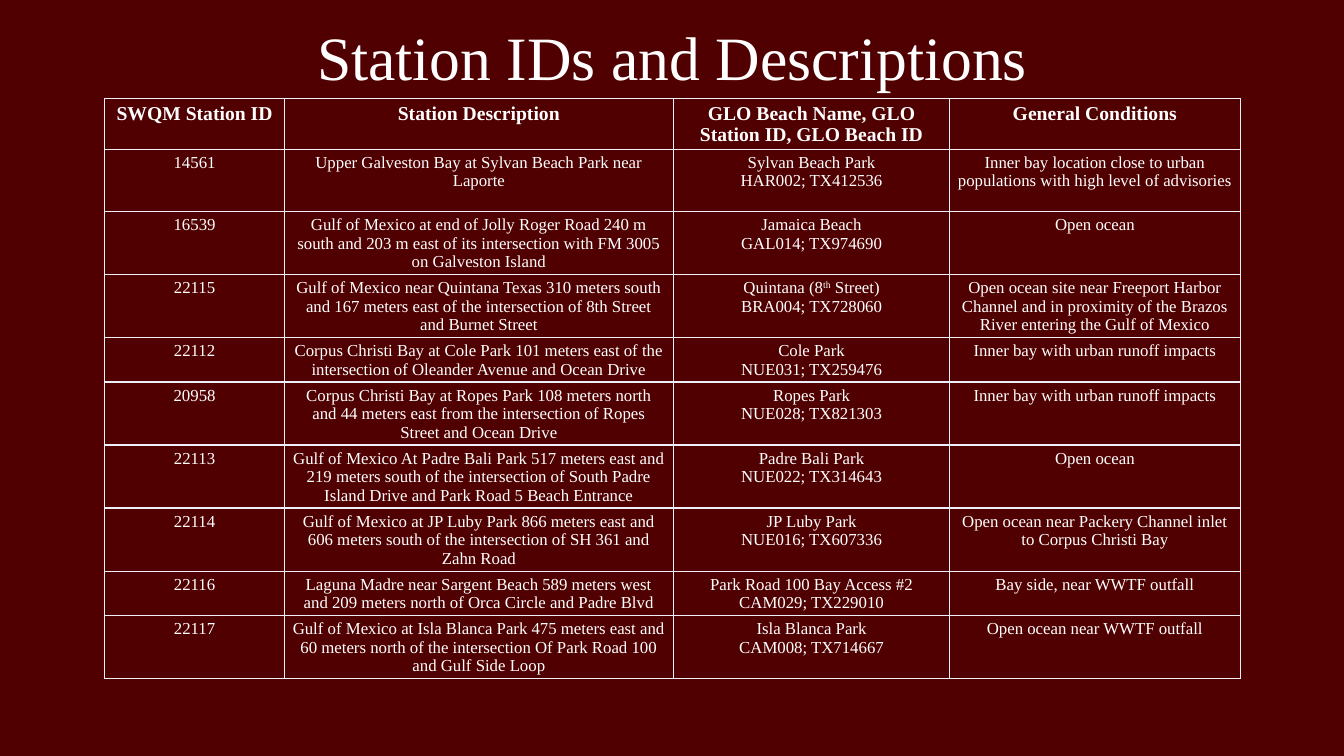
from lxml.etree import SubElement
from pptx import Presentation
from pptx.dml.color import RGBColor
from pptx.enum.text import MSO_ANCHOR, PP_ALIGN
from pptx.oxml.ns import qn
from pptx.util import Inches, Pt

COLORS = {"background": "500000", "text": "FFFFFF", "border": "EEEEF9"}
FONT = "Times New Roman"
TITLE = {"size": Pt(44), "bold": False}
HEADER = {"size": Pt(14), "bold": True}
BODY = {"size": Pt(12), "bold": False}
CELL = {
    "margin_left": Inches(0.08),
    "margin_top": Inches(0.04),
    "margin_right": Inches(0.08),
    "margin_bottom": Inches(0.03),
    "vertical_anchor": MSO_ANCHOR.TOP,
}
TITLE_FRAME = {
    "margin_top": Inches(0.12),
    "vertical_anchor": MSO_ANCHOR.TOP,
    "word_wrap": True,
}

COLUMN_WIDTHS = [1.78, 3.86, 2.74, 2.88]
HEADER_HEIGHT = 0.5
ROW_HEIGHTS = {2: 0.44, 3: 0.62}  # by number of text lines
ROW_LINES = [3, 3, 3, 2, 3, 3, 3, 2, 3]
STATIONS = [
    ["SWQM Station ID", "Station Description",
     "GLO Beach Name, GLO Station ID, GLO Beach ID", "General Conditions"],
    ["14561", "Upper Galveston Bay at Sylvan Beach Park near Laporte",
     "Sylvan Beach Park\nHAR002; TX412536",
     "Inner bay location close to urban populations with high level of advisories"],
    ["16539",
     "Gulf of Mexico at end of Jolly Roger Road 240 m south and 203 m east "
     "of its intersection with FM 3005 on Galveston Island",
     "Jamaica Beach\nGAL014; TX974690", "Open ocean"],
    ["22115",
     "Gulf of Mexico near Quintana Texas 310 meters south and 167 meters east "
     "of the intersection of 8th Street and Burnet Street",
     "Quintana (8^th^ Street)\nBRA004; TX728060",
     "Open ocean site near Freeport Harbor Channel and in proximity "
     "of the Brazos River entering the Gulf of Mexico"],
    ["22112",
     "Corpus Christi Bay at Cole Park 101 meters east "
     "of the intersection of Oleander Avenue and Ocean Drive",
     "Cole Park\nNUE031; TX259476", "Inner bay with urban runoff impacts"],
    ["20958",
     "Corpus Christi Bay at Ropes Park 108 meters north and 44 meters east "
     "from the intersection of Ropes Street and Ocean Drive",
     "Ropes Park\nNUE028; TX821303", "Inner bay with urban runoff impacts"],
    ["22113",
     "Gulf of Mexico At Padre Bali Park 517 meters east and 219 meters south "
     "of the intersection of South Padre Island Drive and Park Road 5 Beach Entrance",
     "Padre Bali Park\nNUE022; TX314643", "Open ocean"],
    ["22114",
     "Gulf of Mexico at JP Luby Park 866 meters east and 606 meters south "
     "of the intersection of SH 361 and Zahn Road",
     "JP Luby Park\nNUE016; TX607336",
     "Open ocean near Packery Channel inlet to Corpus Christi Bay"],
    ["22116",
     "Laguna Madre near Sargent Beach 589 meters west and 209 meters north "
     "of Orca Circle and Padre Blvd",
     "Park Road 100 Bay Access #2\nCAM029; TX229010", "Bay side, near WWTF outfall"],
    ["22117",
     "Gulf of Mexico at Isla Blanca Park 475 meters east and 60 meters north "
     "of the intersection Of Park Road 100 and Gulf Side Loop",
     "Isla Blanca Park\nCAM008; TX714667", "Open ocean near WWTF outfall"],
]


def apply(target, values):
    for name, value in values.items():
        setattr(target, name, value)


class SlideBuilder:
    def __init__(self, prs):
        self.s = prs.slides.add_slide(prs.slide_layouts[5])
        fill = self.s.background.fill
        fill.solid()
        fill.fore_color.rgb = RGBColor.from_string(COLORS["background"])

    def add_text(self, tf, text, font):
        """Fill tf with one paragraph a line; ^marks^ enclose superscript."""
        for i, line in enumerate(text.split("\n")):
            p = tf.paragraphs[0] if i == 0 else tf.add_paragraph()
            p.alignment = PP_ALIGN.CENTER
            for j, part in enumerate(line.split("^")):
                r = p.add_run()
                r.text = part
                apply(r.font, {"name": FONT, **font})
                r.font.color.rgb = RGBColor.from_string(COLORS["text"])
                if j % 2:
                    r._r.get_or_add_rPr().set("baseline", "30000")

    def title(self, text, left, top, width, height):
        sp = self.s.shapes.title
        apply(sp, {"left": Inches(left), "top": Inches(top),
                   "width": Inches(width), "height": Inches(height)})
        apply(sp.text_frame, TITLE_FRAME)
        self.add_text(sp.text_frame, text, TITLE)

    def border(self, cell):
        tc_pr = cell._tc.get_or_add_tcPr()
        for side in ("a:lnL", "a:lnR", "a:lnT", "a:lnB"):
            ln = SubElement(tc_pr, qn(side), w=str(int(Pt(1))))
            fill = SubElement(ln, qn("a:solidFill"))
            SubElement(fill, qn("a:srgbClr"), val=COLORS["border"])

    def table(self, rows, left, top, widths, heights):
        table = self.s.shapes.add_table(
            len(rows), len(widths), Inches(left), Inches(top),
            Inches(sum(widths)), Inches(sum(heights))).table
        apply(table, {"first_row": False, "horz_banding": False})
        for column, width in zip(table.columns, widths):
            column.width = Inches(width)
        for i, (row, height) in enumerate(zip(table.rows, heights)):
            row.height = Inches(height)
            for cell, text in zip(row.cells, rows[i]):
                apply(cell, CELL)
                self.border(cell)
                cell.fill.background()
                self.add_text(cell.text_frame, text, BODY if i else HEADER)


def main():
    prs = Presentation()
    prs.slide_width, prs.slide_height = Inches(13.33), Inches(7.5)
    slide = SlideBuilder(prs)
    slide.title("Station IDs and Descriptions", 0.64, 0.07, 12.06, 1.3)
    heights = [HEADER_HEIGHT] + [ROW_HEIGHTS[n] for n in ROW_LINES]
    slide.table(STATIONS, 1.04, 0.98, COLUMN_WIDTHS, heights)
    prs.save("out.pptx")


if __name__ == "__main__":
    main()
